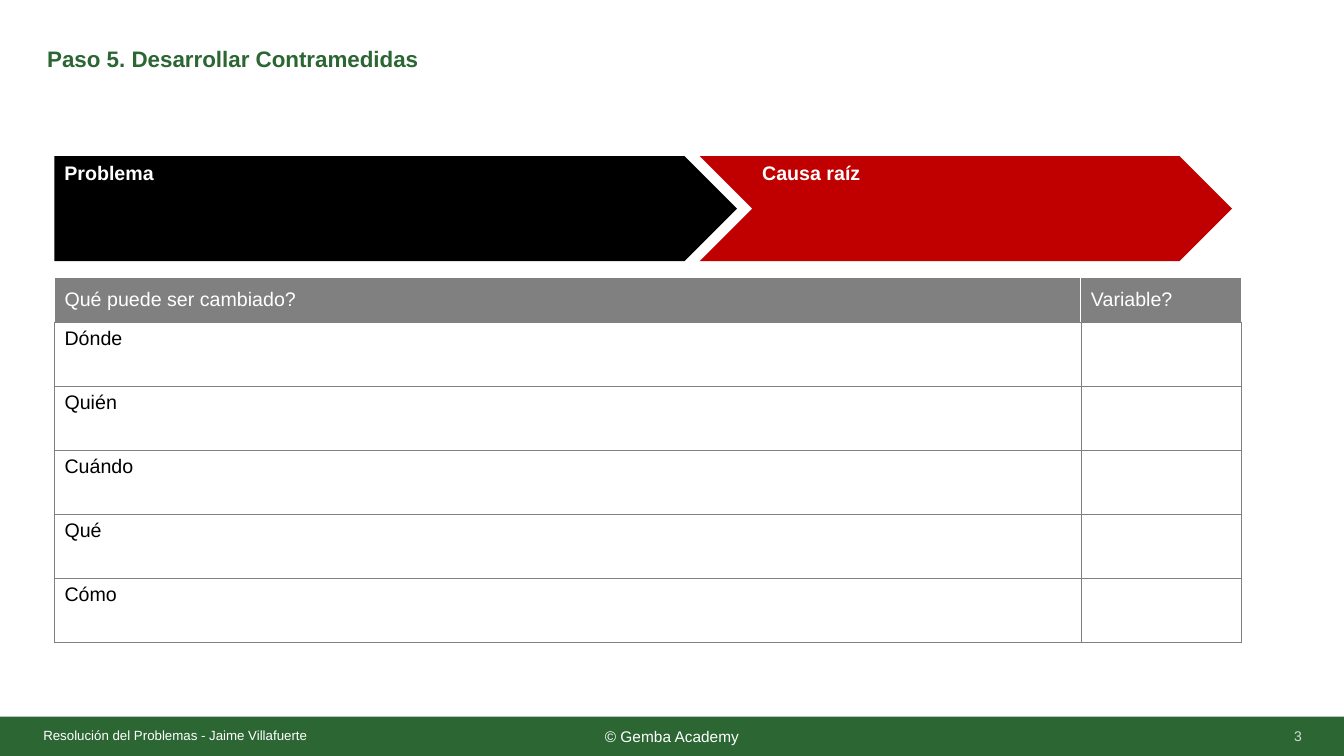
import pptx
from lxml import etree
from pptx.dml.color import RGBColor
from pptx.enum.shapes import MSO_SHAPE
from pptx.enum.text import MSO_ANCHOR, PP_ALIGN
from pptx.oxml.ns import qn
from pptx.util import Inches, Pt

GREEN = RGBColor(0x2B, 0x66, 0x33)
RED = RGBColor(0xC0, 0x00, 0x00)
GRAY = RGBColor(0x80, 0x80, 0x80)
LIGHT_GRAY = RGBColor(0xD9, 0xD9, 0xD9)
BLACK = RGBColor(0, 0, 0)
WHITE = RGBColor(255, 255, 255)

TITLE = "Paso 5. Desarrollar Contramedidas"
COPYRIGHT = "© Gemba Academy"
AUTHOR = "Resolución del Problemas - Jaime Villafuerte"
PAGE = "3"
# text, preset, left, width, fill
ARROWS = [
    ("Problema", MSO_SHAPE.PENTAGON, 0.54, 6.77, BLACK),
    ("Causa raíz", MSO_SHAPE.CHEVRON, 6.94, 5.28, RED),
]
HEADER = ("Qué puede ser cambiado?", "Variable?")
QUESTIONS = ["Dónde", "Quién", "Cuándo", "Qué", "Cómo"]
COLUMN_WIDTHS = (10.18, 1.59)
HEADER_HEIGHT, ROW_HEIGHT = 0.45, 0.635


def write(tf, text, size, color, bold=False, align=PP_ALIGN.LEFT):
    p = tf.paragraphs[0]
    p.text = text
    p.alignment = align
    p.font.name = "Arial"
    p.font.size = Pt(size)
    p.font.bold = bold
    p.font.color.rgb = color
    return p


def add_text(s, box, text, size, color, **style):
    tf = s.shapes.add_textbox(*map(Inches, box)).text_frame
    tf.word_wrap = True
    tf.vertical_anchor = MSO_ANCHOR.MIDDLE
    write(tf, text, size, color, **style)
    return tf


def add_filled(s, preset, box, fill, anchor):
    sp = s.shapes.add_shape(preset, *map(Inches, box))
    sp.shadow.inherit = False
    sp.fill.solid()
    sp.fill.fore_color.rgb = fill
    sp.line.fill.background()
    sp.text_frame.vertical_anchor = anchor
    return sp.text_frame


def set_borders(cell, sides):
    """Draw cell borders; sides maps L, R, T, B to (colour, points)."""
    tcPr = cell._tc.get_or_add_tcPr()
    for side in "LRTB":
        color, width = sides[side]
        ln = etree.SubElement(tcPr, qn("a:ln" + side), w=str(Pt(width)))
        fill = etree.SubElement(ln, qn("a:solidFill"))
        etree.SubElement(fill, qn("a:srgbClr"), val=str(color))


def add_question_table(s):
    rows = [HEADER] + [(question, "") for question in QUESTIONS]
    heights = [HEADER_HEIGHT] + [ROW_HEIGHT] * len(QUESTIONS)
    table = s.shapes.add_table(
        len(rows), len(HEADER), Inches(0.54), Inches(2.75),
        Inches(sum(COLUMN_WIDTHS)), Inches(sum(heights))).table
    table.first_row = table.horz_banding = False
    for column, width in zip(table.columns, COLUMN_WIDTHS):
        column.width = Inches(width)
    body_borders = dict.fromkeys("LRTB", (GRAY, 0.5))
    header_borders = {**dict.fromkeys("LRT", (WHITE, 1)), "B": (GRAY, 0.5)}
    for i, (texts, height) in enumerate(zip(rows, heights)):
        table.rows[i].height = Inches(height)
        is_header = i == 0
        for j, text in enumerate(texts):
            cell = table.cell(i, j)
            set_borders(cell, header_borders if is_header else body_borders)
            if is_header:
                cell.fill.solid()
                cell.fill.fore_color.rgb = GRAY
                cell.vertical_anchor = MSO_ANCHOR.MIDDLE
            else:
                cell.fill.background()
            write(cell.text_frame, text, 14, WHITE if is_header else BLACK)


def main():
    prs = pptx.Presentation()
    prs.slide_width, prs.slide_height = Inches(13.33), Inches(7.5)
    s = prs.slides.add_slide(prs.slide_layouts[6])

    footer = add_filled(s, MSO_SHAPE.RECTANGLE, (0, 7.11, 13.33, 0.39),
                        GREEN, MSO_ANCHOR.MIDDLE)
    write(footer, COPYRIGHT, 11, WHITE, align=PP_ALIGN.CENTER)
    title = add_text(s, (0.37, 0.34, 11.5, 0.52), TITLE, 16, GREEN, bold=True)
    title.paragraphs[0].line_spacing = 0.9
    author = add_text(s, (0.43, 7.17, 3, 0.24), AUTHOR, 9.5, WHITE)
    author.margin_left = author.margin_right = 0
    author.margin_top = author.margin_bottom = 0
    add_text(s, (10.01, 7.1, 3, 0.4), PAGE, 10, LIGHT_GRAY,
             align=PP_ALIGN.RIGHT)

    for text, preset, left, width, fill in ARROWS:
        tf = add_filled(s, preset, (left, 1.55, width, 1.04), fill,
                        MSO_ANCHOR.TOP)
        write(tf, text, 14, WHITE, bold=True)

    add_question_table(s)
    prs.save("out.pptx")


if __name__ == "__main__":
    main()
